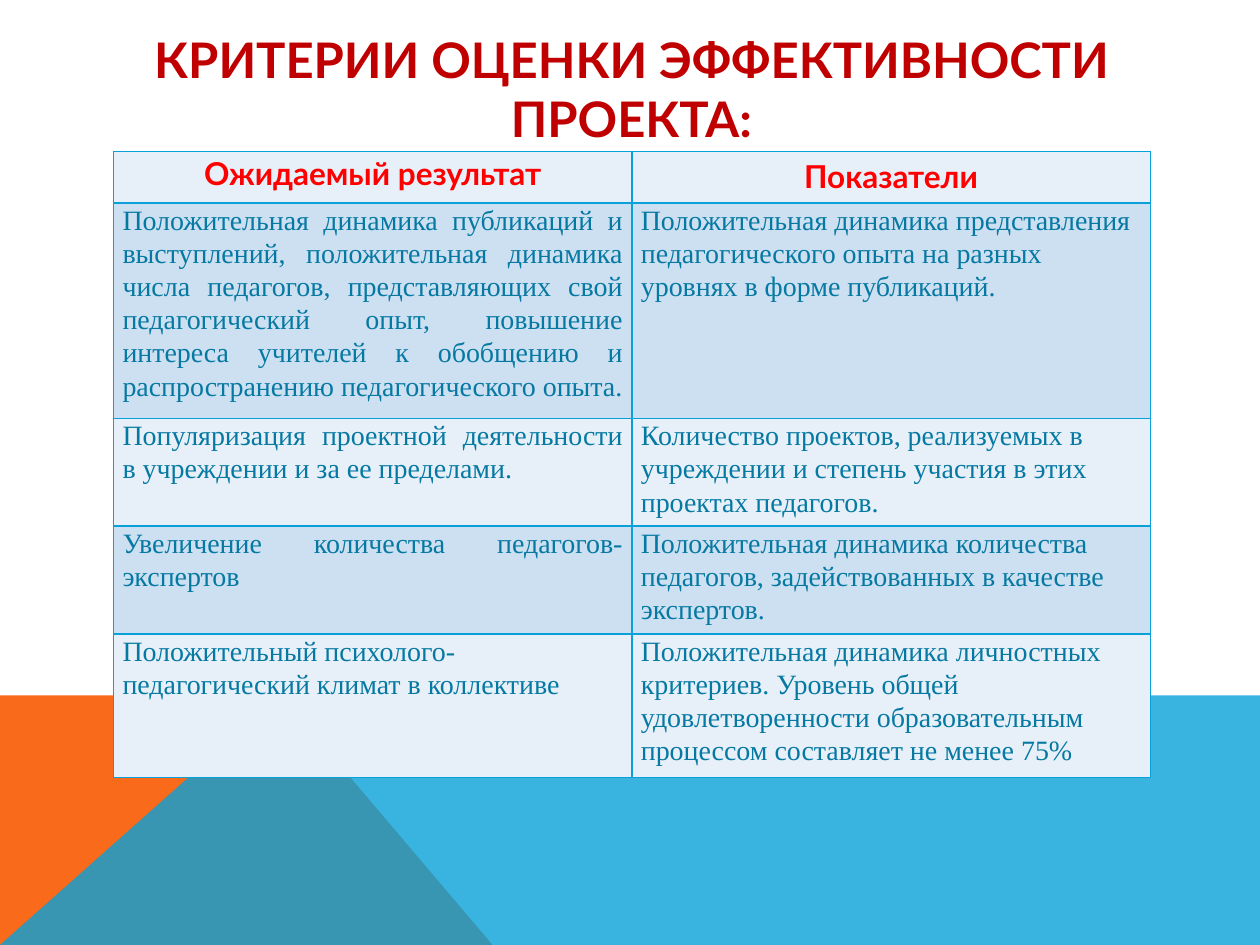
from lxml.etree import SubElement
from pptx import Presentation
from pptx.dml.color import RGBColor
from pptx.enum.text import MSO_ANCHOR as Anchor, PP_ALIGN as Align
from pptx.oxml.ns import qn
from pptx.util import Cm, Pt

WIDE, HIGH = 25.4, 19.05
TITLE = "КРИТЕРИИ ОЦЕНКИ ЭФФЕКТИВНОСТИ ПРОЕКТА:"
HEADS = ("Ожидаемый результат", "Показатели")
ROWS = [
    ("Положительная динамика публикаций и выступлений, положительная динамика "
     "числа педагогов, представляющих свой педагогический опыт, повышение "
     "интереса учителей к обобщению и распространению педагогического опыта.",
     "Положительная динамика представления педагогического опыта на разных "
     "уровнях в форме публикаций."),
    ("Популяризация проектной деятельности в учреждении и за ее пределами.",
     "Количество проектов, реализуемых в учреждении и степень участия в этих "
     "проектах педагогов."),
    ("Увеличение количества педагогов-экспертов",
     "Положительная динамика количества педагогов, задействованных в качестве "
     "экспертов."),
    ("Положительный психолого-педагогический климат в коллективе",
     "Положительная динамика личностных критериев. Уровень общей "
     "удовлетворенности образовательным процессом составляет не менее 75%"),
]
BLUE = "08A1D9"
BANDS = ("E7F0F8", "CCE0F1")
TOP, PEAK = 14.02, 5.66  # upper edge of the footer shapes, and where they meet
FOOTER = [
    ("F96A1B", 100, [(0, HIGH), (0, TOP), (PEAK, TOP), (9.93, HIGH)]),
    (BLUE, 80, [(0, HIGH), (PEAK, TOP), (WIDE, TOP), (WIDE, HIGH)]),
]


def paint(fill, color):
    fill.solid()
    fill.fore_color.rgb = RGBColor.from_string(color)


def draw(shapes, color, alpha, points):
    """Add a closed outline; alpha is its opacity in percent."""
    pen = shapes.build_freeform(*map(Cm, points[0]))
    pen.add_line_segments([(Cm(x), Cm(y)) for x, y in points[1:]])
    form = pen.convert_to_shape()
    form.shadow.inherit = False
    form.line.fill.background()
    paint(form.fill, color)
    if alpha < 100:
        tint = form.fill._xPr.find(".//" + qn("a:srgbClr"))
        SubElement(tint, qn("a:alpha"), val=str(alpha * 1000))


def write(frame, text, size, face, color, bold, align):
    frame.text = text
    para = frame.paragraphs[0]
    para.alignment = align
    font = para.font
    font.size, font.name, font.bold = Pt(size), face, bold
    font.color.rgb = RGBColor.from_string(color)
    return para


def edge(cell):
    """Fill in the four borders, ahead of the cell's fill."""
    props = cell._tc.get_or_add_tcPr()
    for spot, side in enumerate(("lnL", "lnR", "lnT", "lnB")):
        line = SubElement(props, qn("a:" + side), w=str(Pt(1)))
        SubElement(SubElement(line, qn("a:solidFill")), qn("a:srgbClr"), val=BLUE)
        props.insert(spot, line)


def tabulate(shapes):
    frame = shapes.add_table(len(ROWS) + 1, 2, Cm(2.29), Cm(3.05), Cm(20.9), Cm(5.2))
    table = frame.table
    table.first_row = table.horz_banding = False
    for r, row in enumerate([HEADS] + ROWS):
        table.rows[r].height = Cm(1.04)
        for c, text in enumerate(row):
            cell = table.cell(r, c)
            if r == 0:
                style = (18, "Lato", "FF0000", True, Align.CENTER)
            else:
                last = r == len(ROWS)
                align = Align.LEFT if c or last else Align.JUSTIFY
                style = (16, "Times New Roman", "0679A3", False, align)
            para = write(cell.text_frame, text, *style)
            if (r, c) != (0, 1):
                para.line_spacing = 1.07
                cell.margin_left = cell.margin_right = Cm(0.18)
                cell.margin_top = cell.margin_bottom = 0
            paint(cell.fill, BANDS[r % 2])
            edge(cell)


def main():
    deck = Presentation()
    deck.slide_width, deck.slide_height = Cm(WIDE), Cm(HIGH)
    shapes = deck.slides.add_slide(deck.slide_layouts[6]).shapes
    for part in FOOTER:
        draw(shapes, *part)
    title = shapes.add_textbox(Cm(2.29), Cm(1.02), Cm(20.88), Cm(1.52)).text_frame
    title.word_wrap = True
    title.vertical_anchor = Anchor.MIDDLE
    write(title, TITLE, 28, "Lato", "C00000", True, Align.CENTER)
    tabulate(shapes)
    deck.save("out.pptx")


if __name__ == "__main__":
    main()
